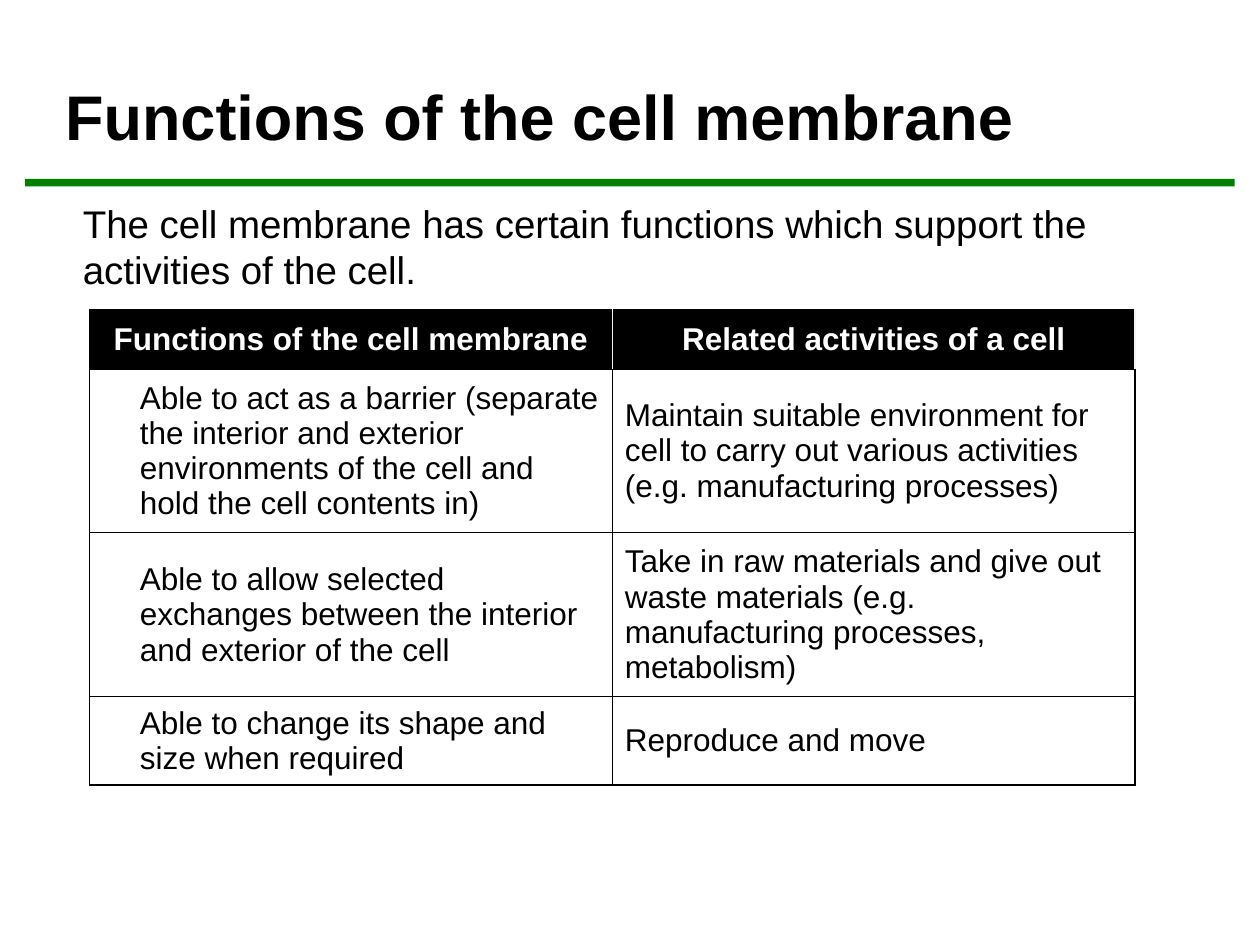
from pptx import Presentation
from pptx.dml.color import RGBColor
from pptx.enum.shapes import MSO_SHAPE
from pptx.enum.text import MSO_ANCHOR, PP_ALIGN
from pptx.oxml import parse_xml
from pptx.oxml.ns import nsdecls
from pptx.util import Pt

RECTANGLE = MSO_SHAPE.RECTANGLE
MIDDLE, TOP = MSO_ANCHOR.MIDDLE, MSO_ANCHOR.TOP
CENTER, LEFT = PP_ALIGN.CENTER, PP_ALIGN.LEFT

COLORS = {
    "text": "000000",
    "header_text": "FFFFFF",
    "header_fill": "000000",
    "body_fill": "FFFFFF",
    "rule": "008000",
    "border": "000000",
    "header_divider": "F2F2F2",
}
FONT = "Arial"

HEADERS = ["Functions of the cell membrane", "Related activities of a cell"]
FUNCTIONS = [
    ("Able to act as a barrier (separate the interior and exterior environments "
     "of the cell and hold the cell contents in)",
     "Maintain suitable environment for cell to carry out various activities "
     "(e.g. manufacturing processes)"),
    ("Able to allow selected exchanges between the interior and exterior of the cell",
     "Take in raw materials and give out waste materials "
     "(e.g. manufacturing processes, metabolism)"),
    ("Able to change its shape and size when required", "Reproduce and move"),
]


def write_text(frame, text, size, color="text", bold=False, align=LEFT, indent=0):
    para = frame.paragraphs[0]
    para.alignment = align
    if indent:
        properties = para._p.get_or_add_pPr()
        properties.set("marL", str(Pt(indent)))
        properties.set("indent", "0")
    span = para.add_run()
    span.text = text
    span.font.name = FONT
    span.font.size = Pt(size)
    span.font.bold = bold
    span.font.color.rgb = RGBColor.from_string(COLORS[color])


class SlideBuilder:
    def __init__(self, page):
        self.page = page

    def bar(self, left, top, width, height, color):
        box = self.page.shapes.add_shape(
            RECTANGLE, Pt(left), Pt(top), Pt(width), Pt(height))
        box.shadow.inherit = False
        box.fill.solid()
        box.fill.fore_color.rgb = RGBColor.from_string(COLORS[color])
        box.line.fill.background()

    def text(self, left, top, width, height, text, size, bold=False,
             anchor=TOP, inset_top=3.6):
        box = self.page.shapes.add_textbox(Pt(left), Pt(top), Pt(width), Pt(height))
        frame = box.text_frame
        frame.word_wrap = True
        frame.vertical_anchor = anchor
        frame.margin_top = Pt(inset_top)
        write_text(frame, text, size, bold=bold)

    def border(self, cell, side, color, width):
        cell._tc.get_or_add_tcPr().append(parse_xml(
            f'<a:{side} {nsdecls("a")} w="{Pt(width)}"><a:solidFill>'
            f'<a:srgbClr val="{COLORS[color]}"/></a:solidFill></a:{side}>'))

    def cell(self, cell, text, header, first):
        cell.vertical_anchor = MIDDLE
        # Borders come before the fill in the cell properties
        inner = "header_divider" if header else "border"
        self.border(cell, "lnL", "border" if first else inner, 0.75 if first else 1)
        self.border(cell, "lnR", inner, 1)
        self.border(cell, "lnT", "border", 0.75)
        self.border(cell, "lnB", "border", 0.75)
        cell.fill.solid()
        fill = "header_fill" if header else "body_fill"
        cell.fill.fore_color.rgb = RGBColor.from_string(COLORS[fill])
        write_text(cell.text_frame, text, 18,
                   color="header_text" if header else "text", bold=header,
                   align=CENTER if header else LEFT,
                   indent=21.6 if first and not header else 0)

    def table(self, left, top, column_width, heights, rows):
        columns = len(rows[0])
        table = self.page.shapes.add_table(
            len(rows), columns, Pt(left), Pt(top),
            Pt(column_width * columns), Pt(sum(heights))).table
        for column in table.columns:
            column.width = Pt(column_width)
        for r, (height, texts) in enumerate(zip(heights, rows)):
            table.rows[r].height = Pt(height)
            for c, text in enumerate(texts):
                self.cell(table.cell(r, c), text, header=r == 0, first=c == 0)


def main():
    deck = Presentation()
    deck.slide_width, deck.slide_height = Pt(720), Pt(540)
    builder = SlideBuilder(deck.slides.add_slide(deck.slide_layouts[6]))

    # Title and green rule
    builder.bar(14.4, 102.2, 691.2, 4.3, "rule")
    builder.text(30.2, 23.8, 648, 77.8, "Functions of the cell membrane", 36,
                 bold=True, anchor=MIDDLE, inset_top=10)

    # Table of functions and activities
    builder.table(51.1, 177.1, 298.8, [33.8, 87.8, 87.8, 47.5], [HEADERS, *FUNCTIONS])

    # Introduction
    builder.text(40.3, 110.9, 643.7, 60.5,
                 "The cell membrane has certain functions which support "
                 "the activities of the cell.", 22)

    deck.save("out.pptx")


if __name__ == "__main__":
    main()
